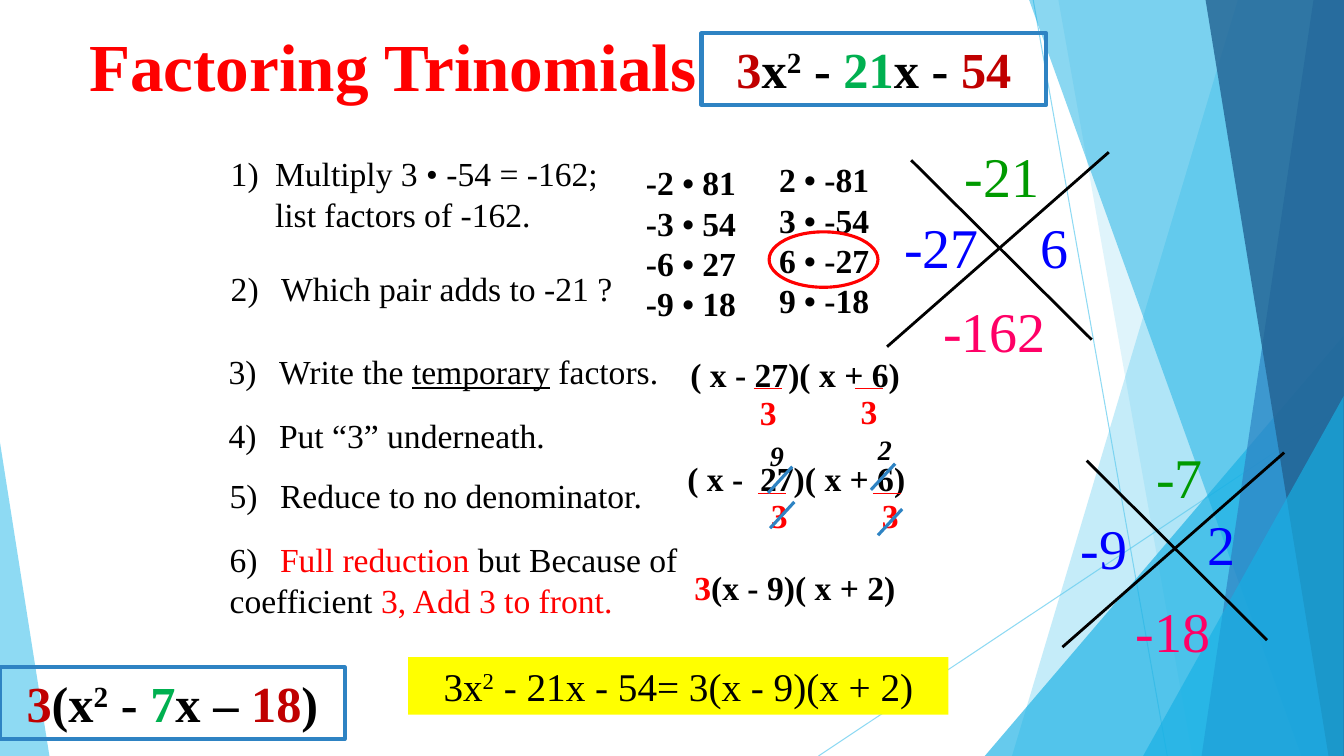
from lxml.etree import SubElement
from pptx import Presentation
from pptx.dml.color import RGBColor
from pptx.enum.shapes import MSO_CONNECTOR as Connector, MSO_SHAPE as Shape
from pptx.enum.text import MSO_ANCHOR as Anchor, PP_ALIGN as Align
from pptx.oxml.ns import qn
from pptx.util import Inches, Pt

BLACK = RGBColor(0x00, 0x00, 0x00)
RED = RGBColor(0xFF, 0x00, 0x00)
DARK_RED = RGBColor(0xC0, 0x00, 0x00)
GREEN = RGBColor(0x00, 0xB0, 0x50)
SUM_GREEN = RGBColor(0x00, 0x9A, 0x00)
FACTOR_BLUE = RGBColor(0x00, 0x00, 0xFF)
PRODUCT_PINK = RGBColor(0xFF, 0x00, 0x66)
YELLOW = RGBColor(0xFF, 0xFF, 0x00)
SKY = RGBColor(0x5F, 0xCB, 0xEF)
CYAN = RGBColor(0x17, 0xB0, 0xE4)
BLUE = RGBColor(0x2E, 0x83, 0xC3)
NAVY = RGBColor(0x22, 0x62, 0x92)
CELL = Inches(0.1)
COLUMNS, ROWS = 133.33, 75
TAB = 4.4

presentation = Presentation()
presentation.slide_width = int(COLUMNS * CELL)
presentation.slide_height = ROWS * CELL
slide = presentation.slides.add_slide(presentation.slide_layouts[5])
shapes = slide.shapes


def write_text(place, paragraphs, size, bold=False, italic=False, align=Align.LEFT, shape=None):
    left, top, width, height = (int(value * CELL) for value in place)
    if shape is None:
        shape = shapes.add_textbox(left, top, width, height)
    shape.left, shape.top, shape.width, shape.height = left, top, width, height
    frame = shape.text_frame
    frame.word_wrap = True
    frame.vertical_anchor = Anchor.TOP
    for index, pieces in enumerate(paragraphs):
        paragraph = frame.add_paragraph() if index else frame.paragraphs[0]
        paragraph.alignment = align
        for text, color, *style in pieces:
            run = paragraph.add_run()
            run.text = text
            run.font.name = "Times New Roman"
            run.font.size = Pt(size)
            run.font.bold, run.font.italic = bold, italic
            run.font.color.rgb = color
            if "underline" in style:
                run.font.underline = True
            if "raised" in style:
                run.font._element.set("baseline", "30000")
            if "wide" in style:
                run.font._element.set("spc", "600")
    return shape


def add_line(start, end, color, width):
    line = shapes.add_connector(Connector.STRAIGHT, *(int(value * CELL) for value in start + end))
    line.line.color.rgb = color
    line.line.width = Pt(width)
    SubElement(line._element.spPr, qn("a:effectLst"))
    return line


backdrop = [
    (add_line((102.5, 0), (115.8, ROWS), SKY, 0.75), 70),
    (add_line((COLUMNS, 40.3), (81.2, ROWS), SKY, 0.75), 70),
]
panes = [
    ((122.8, 100.4), SKY, 36),
    ((105, 118.3), SKY, 20),
    ((97.7, 33.3, 35.6, 41.7, 1), CYAN, 66),
    ((102.1, 129.1), CYAN, 50),
    ((130.3, 119.2), BLUE, 70),
    ((119.6, 131.8), NAVY, 80),
    ((113.4, 39.3, 19.9, 35.7, 1), CYAN, 66),
    ((0, 43.9, 4.9, 31.1, 0), SKY, 70),
]
for outline, color, opacity in panes:
    if len(outline) == 2:
        top_left, bottom_left = outline
        corners = [(COLUMNS, 0), (COLUMNS, ROWS), (bottom_left, ROWS)]
        builder = shapes.build_freeform(top_left * CELL, 0)
        builder.add_line_segments([(x * CELL, y * CELL) for x, y in corners])
        pane = builder.convert_to_shape()
    else:
        *place, peak = outline
        pane = shapes.add_shape(Shape.ISOSCELES_TRIANGLE, *(int(value * CELL) for value in place))
        pane.adjustments[0] = peak
    pane.shadow.inherit = False
    pane.fill.solid()
    pane.fill.fore_color.rgb = color
    pane.line.fill.background()
    backdrop.append((pane, opacity))
for shape, opacity in backdrop:
    tint = shape._element.spPr.find(".//" + qn("a:srgbClr"))
    SubElement(tint, qn("a:alpha"), val=str(opacity * 1000))

write_text((3.7, 1.9, 70.6, 9), [[("Factoring Trinomials", RED)]], 48, True,
           align=Align.CENTER, shape=shapes.title)

equations = [
    ((69.6, 3.3, 34.2, 7.1), 36, None,
     [("3", DARK_RED), ("x", BLACK), ("2", BLACK, "raised"), (" - ", BLACK),
      ("21", GREEN), ("x - ", BLACK), ("54", DARK_RED)]),
    ((0, 66.2, 34.2, 7.1), 36, None,
     [("3", DARK_RED), ("(x", BLACK), ("2", BLACK, "raised"), (" - ", BLACK),
      ("7", GREEN), ("x – ", BLACK), ("18", DARK_RED), (")", BLACK)]),
    ((40.5, 65.2, 53.6, 5.7), 28, YELLOW,
     [("3x", BLACK), ("2", BLACK, "raised"), (" - 21x - 54= 3(x - 9)(x + 2)", BLACK)]),
]
for place, size, fill, pieces in equations:
    box = shapes.add_shape(Shape.RECTANGLE, 0, 0, CELL, CELL)
    box.shadow.inherit = False
    if fill is None:
        box.fill.background()
        box.line.color.rgb = BLUE
        box.line.width = Pt(3)
    else:
        box.fill.solid()
        box.fill.fore_color.rgb = fill
        box.line.fill.background()
    write_text(place, [pieces], size, fill is None, align=Align.CENTER, shape=box)

steps = [
    (21.9, 14.7, 40.9, 9.1, TAB, [("1)\tMultiply 3 • -54 = -162; list factors of -162.", BLACK)]),
    (21.9, 26.1, 40.1, 5, 0, [("2)\tWhich pair adds to -21 ?", BLACK)]),
    (21.7, 34.3, 47, 5, 0,
     [("3)\tWrite the ", BLACK), ("temporary", BLACK, "underline"), (" factors.", BLACK)]),
    (21.7, 40.7, 47, 5, 0, [("4)\tPut “3” underneath.", BLACK)]),
    (21.8, 46.6, 47, 5, 0, [("5)\tReduce to no denominator.", BLACK)]),
    (21.8, 53, 47, 9.1, 0,
     [("6)\t", BLACK), ("Full reduction ", RED), ("but Because of coefficient ", BLACK),
      ("3, Add 3 to front.", RED)]),
]
for *place, hang, pieces in steps:
    step = write_text(place, [pieces], 24)
    properties = step.text_frame.paragraphs[0]._p.get_or_add_pPr()
    properties.set("marL", str(int(hang * CELL)))
    properties.set("indent", str(int(-hang * CELL)))
    tabs = SubElement(properties, qn("a:tabLst"))
    SubElement(tabs, qn("a:tab"), pos=str(int(TAB * CELL)), algn="l")

factor_lists = [
    ((63.1, 15.6, 12.4, 17.2), ["-2 • 81", "-3 • 54", "-6 • 27", "-9 • 18"]),
    ((76.3, 15.3, 11.8, 17.2), ["2 • -81", "3 • -54", "6 • -27", "9 • -18"]),
]
for place, pairs in factor_lists:
    write_text(place, [[(pair, BLACK)] for pair in pairs], 24, True)

ring = shapes.add_shape(Shape.OVAL, *(int(value * CELL) for value in (76.3, 23, 10.8, 5.5)))
ring.shadow.inherit = False
ring.fill.background()
ring.line.color.rgb = RED
ring.line.width = Pt(2.25)

products = [
    (67.5, 34.6, [("( x - 27)( x + 6)", BLACK)]),
    (67.2, 44.9, [("( x -", BLACK), (" ", BLACK, "wide"), ("27)( x + 6)", BLACK)]),
    (67.9, 55.8, [("3", RED), ("(x - 9)( x + 2)", BLACK)]),
]
for left, top, pieces in products:
    write_text((left, top, 24.6, 5), [pieces], 24, True)

denominators = [
    (74.4, 38.4, 74.8, 38.5),
    (84.4, 38.3, 84.8, 38.5),
    (75.5, 48.6, 75.2, 49),
    (86.5, 48.6, 86.6, 49),
]
for left, top, bar_left, bar_top in denominators:
    write_text((left, top, 4.5, 5), [[("3", RED)]], 24, True)
    add_line((bar_left, bar_top), (bar_left + 2.8, bar_top), RED, 0.75)

for right, top in [(89.5, 50.5), (88.8, 46), (78.8, 49.8), (78.6, 46.3)]:
    add_line((right, top), (right - 2.4, top + 2.6), BLUE, 2.25)

for left, top, quotient in [(86.1, 42.4, "2"), (75.4, 43, "9")]:
    write_text((left, top, 5.1, 4.3), [[(quotient, BLACK)]], 20, True, True)

crosses = [
    (88, 15.1, [("-162", 92.6, 28.9, PRODUCT_PINK), ("-21", 94.7, 13.5, SUM_GREEN),
                ("-27", 88.7, 20.6, FACTOR_BLUE), ("6", 102.2, 20.6, FACTOR_BLUE)]),
    (105.4, 44.9, [("-18", 111.7, 58.7, PRODUCT_PINK), ("-7", 113.7, 43.4, SUM_GREEN),
                   ("-9", 106.2, 50.4, FACTOR_BLUE), ("2", 118.8, 50.1, FACTOR_BLUE)]),
]
for left, top, numbers in crosses:
    add_line((left + 2.4, top + 0.8), (left + 20.3, top + 18.6), BLACK, 2)
    add_line((left + 22, top), (left, top + 19.3), BLACK, 2)
    for text, text_left, text_top, color in numbers:
        write_text((text_left, text_top, 14.5, 7.5), [[(text, color)]], 40)

presentation.save("out.pptx")
